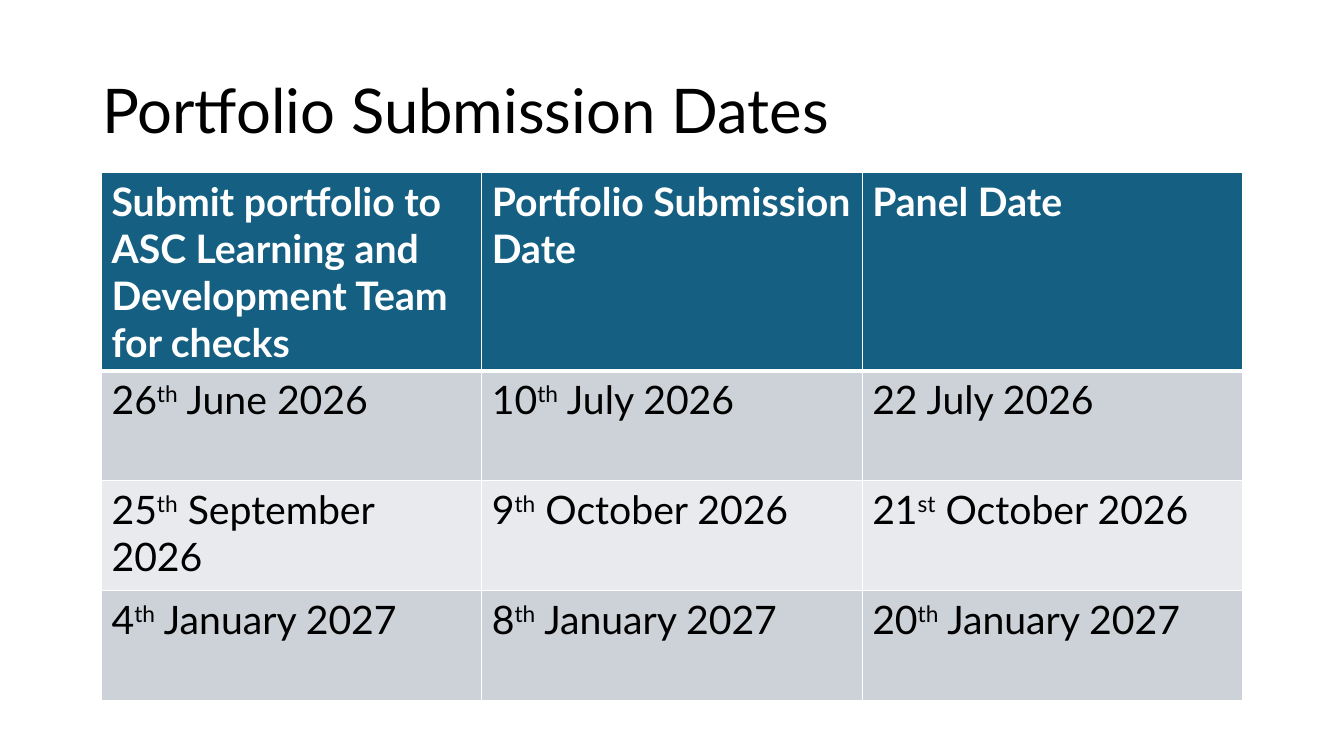
from lxml import etree
from pptx import Presentation
from pptx.dml.color import RGBColor
from pptx.enum import text
from pptx.oxml import ns
from pptx.util import Pt

FONT = "Lato"
BLACK = RGBColor(0x00, 0x00, 0x00)
WHITE = RGBColor(0xFF, 0xFF, 0xFF)
HEADER_BLUE = RGBColor(0x15, 0x60, 0x82)
BAND_DARK = RGBColor(0xCC, 0xD2, 0xD8)
BAND_LIGHT = RGBColor(0xE8, 0xEA, 0xED)

HEADERS = [
    "Submit portfolio to ASC Learning and Development Team for checks",
    "Portfolio Submission Date",
    "Panel Date",
]
# Each date is (day, ordinal suffix, month and year)
DATES = [
    [("26", "th", " June 2026"), ("10", "th", " July 2026"), ("22 July 2026",)],
    [("25", "th", " September 2026"), ("9", "th", " October 2026"), ("21", "st", " October 2026")],
    [("4", "th", " January 2027"), ("8", "th", " January 2027"), ("20", "th", " January 2027")],
]


def add_run(p, words, size, color, bold=False, raised=False):
    r = p.add_run()
    r.text = words
    f = r.font
    f.name, f.size, f.bold = FONT, Pt(size), bold
    f.color.rgb = color
    if raised:
        r._r.get_or_add_rPr().set("baseline", "30000")


def add_title(s, words):
    sp = s.shapes.add_textbox(Pt(66), Pt(28.75), Pt(828), Pt(104.4))
    tf = sp.text_frame
    tf.word_wrap = True
    tf.vertical_anchor = text.MSO_ANCHOR.MIDDLE
    p = tf.paragraphs[0]
    p.line_spacing = 0.9
    add_run(p, words, 44, BLACK)


def set_borders(cell, top, bottom):
    tc_pr = cell._tc.get_or_add_tcPr()
    for side, width in (("L", 1), ("R", 1), ("T", top), ("B", bottom)):
        ln = etree.SubElement(tc_pr, ns.qn(f"a:ln{side}"), w=str(Pt(width)))
        fill = etree.SubElement(ln, ns.qn("a:solidFill"))
        etree.SubElement(fill, ns.qn("a:srgbClr"), val=str(WHITE))


def fill_cell(cell, parts, fill, color, bold, top, bottom):
    set_borders(cell, top, bottom)
    cell.fill.solid()
    cell.fill.fore_color.rgb = fill
    p = cell.text_frame.paragraphs[0]
    for i, part in enumerate(parts):
        add_run(p, part, 28, color, bold, raised=i == 1)


def add_dates_table(s):
    rows = [[(h,) for h in HEADERS]] + DATES
    heights = [141.6] + [78.5] * len(DATES)
    table = s.shapes.add_table(
        len(rows), len(HEADERS), Pt(72.5), Pt(123.2), Pt(815.1), Pt(sum(heights))
    ).table
    for col in table.columns:
        col.width = Pt(271.7)
    for i, row in enumerate(rows):
        table.rows[i].height = Pt(heights[i])
        header = i == 0
        fill = HEADER_BLUE if header else BAND_DARK if i % 2 else BAND_LIGHT
        for j, parts in enumerate(row):
            fill_cell(table.cell(i, j), parts, fill, WHITE if header else BLACK, header,
                      top=3 if i == 1 else 1, bottom=3 if header else 1)


def main():
    prs = Presentation()
    prs.slide_width, prs.slide_height = Pt(960), Pt(540)
    s = prs.slides.add_slide(prs.slide_layouts[6])
    # Heading
    add_title(s, "Portfolio Submission Dates")
    # Submission and panel dates
    add_dates_table(s)
    prs.save("out.pptx")


if __name__ == "__main__":
    main()
